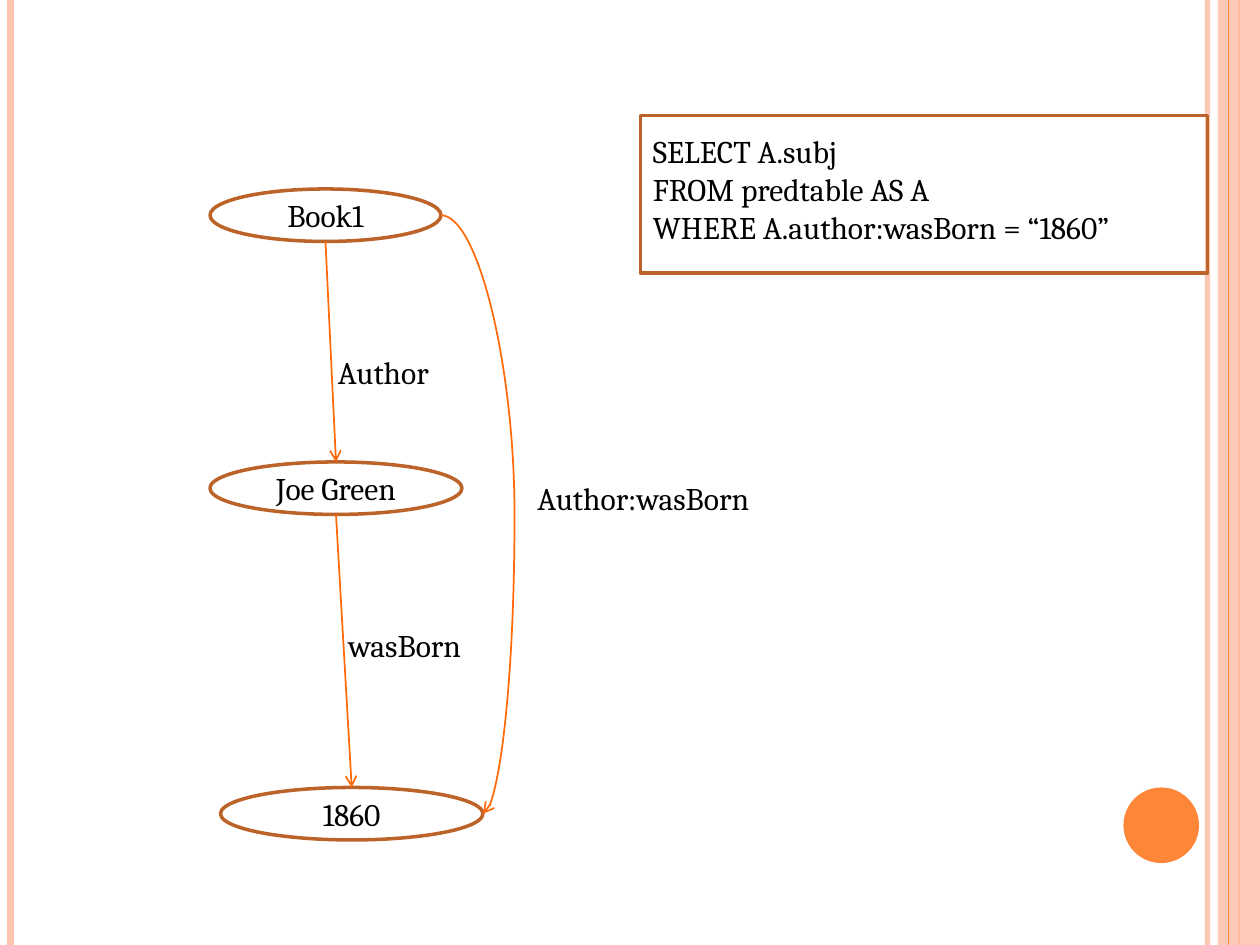
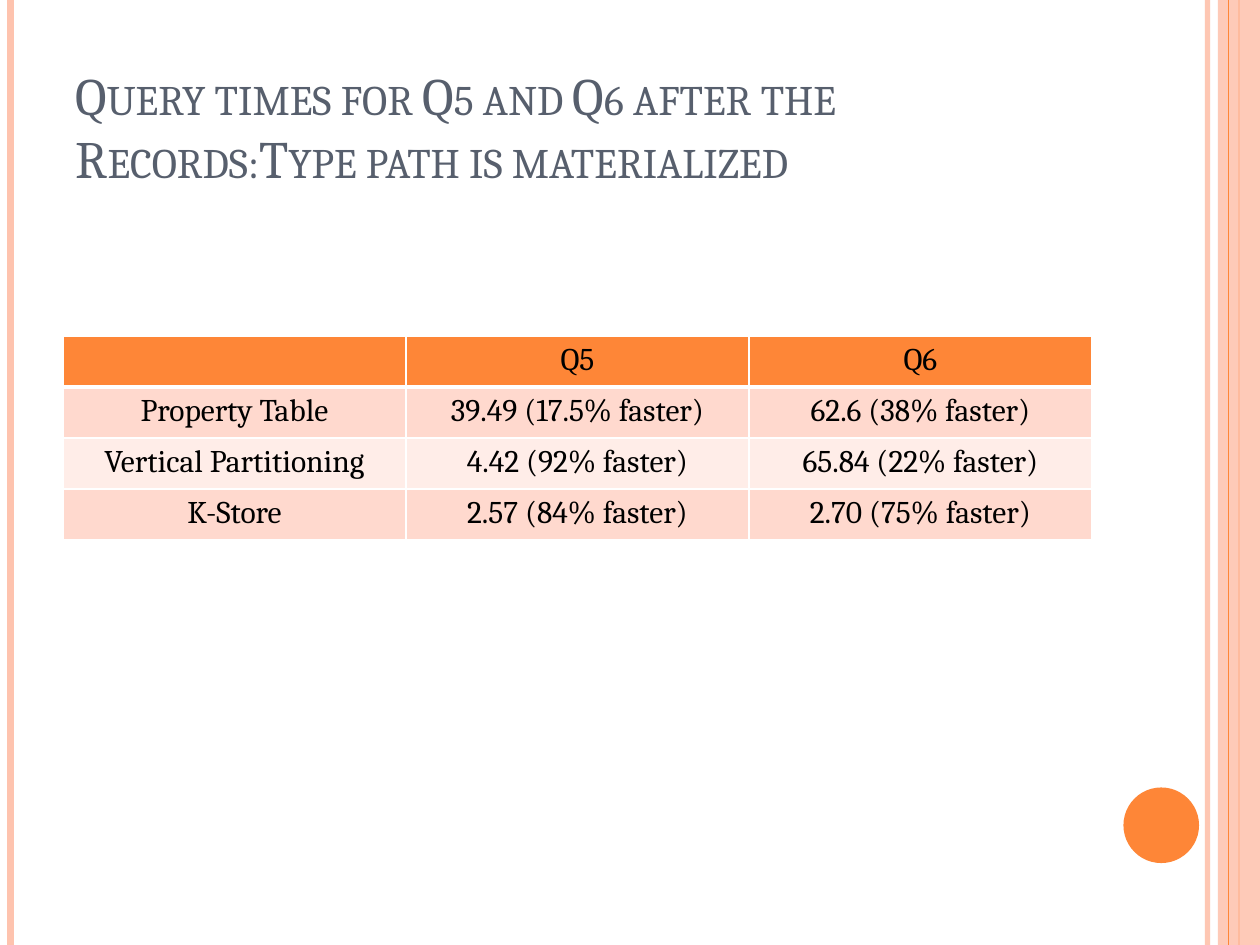
from pptx import Presentation
from pptx.dml.color import RGBColor
from pptx.enum.shapes import MSO_CONNECTOR, MSO_SHAPE
from pptx.enum.text import MSO_ANCHOR, PP_ALIGN
from pptx.oxml.ns import qn
from pptx.util import Inches, Pt
from lxml import etree

RECT, OVAL = MSO_SHAPE.RECTANGLE, MSO_SHAPE.OVAL
STRAIGHT, CURVE = MSO_CONNECTOR.STRAIGHT, MSO_CONNECTOR.CURVE
LEFT, CENTER = PP_ALIGN.LEFT, PP_ALIGN.CENTER
TOP, MIDDLE, BOTTOM = MSO_ANCHOR.TOP, MSO_ANCHOR.MIDDLE, MSO_ANCHOR.BOTTOM

# Grid: 120 columns by 90 rows, twelve to the inch
COLS, ROWS = 120, 90
FONT = "Cambria"
COLORS = {
    "text": "000000", "title": "575F6D", "white": "FFFFFF",
    "accent": "FE8637", "band": "FEC3AE", "outline": "BC6329",
    "arrow": "FF6B0A", "row_dark": "FFD9CE", "row_light": "FFEDE8",
}


def grid(n):
    return Inches(n / 12)


def rgb(name):
    return RGBColor.from_string(COLORS[name])


def add_sub(parent, tag, **attrs):
    return etree.SubElement(parent, qn(tag), attrs)


def set_alpha(parent, percent):
    color = next(parent.iter(qn("a:srgbClr")))
    add_sub(color, "a:alpha", val=str(percent * 1000))


def write(tf, text, size=18, color="text", align=LEFT, anchor=TOP):
    tf.text = text
    tf.vertical_anchor = anchor
    for p in tf.paragraphs:
        p.alignment = align
        for r in p.runs:
            r.font.name, r.font.size = FONT, Pt(size)
            r.font.color.rgb = rgb(color)


def add_shape(slide, kind, box, fill=None, line=None):
    s = slide.shapes.add_shape(kind, *map(grid, box))
    s.shadow.inherit = False
    if fill:
        s.fill.solid()
        s.fill.fore_color.rgb = rgb(fill)
    else:
        s.fill.background()
    if line:
        s.line.color.rgb = rgb(line)
        s.line.width = Pt(2)
    else:
        s.line.fill.background()
    return s


def add_text(slide, box, text, wrap=True, **style):
    tf = slide.shapes.add_textbox(*map(grid, box)).text_frame
    tf.word_wrap = wrap
    write(tf, text, **style)
    return tf


def add_line(slide, start, end, color, width, kind=STRAIGHT, alpha=None, arrow=False):
    c = slide.shapes.add_connector(kind, *map(grid, start + end))
    c.line.color.rgb = rgb(color)
    c.line.width = Pt(width)
    ln = c.line._get_or_add_ln()
    if alpha:
        set_alpha(ln, alpha)
    if arrow:
        add_sub(ln, "a:tailEnd", type="arrow")
    add_sub(c._element.spPr, "a:effectLst")
    return c


def add_frame(slide):
    """Vertical rules, right band and corner disc on every slide."""
    def rule(x, color, width, alpha=None):
        add_line(slide, (x, 0), (x, ROWS), color, width, alpha=alpha)

    rule(115, "band", 3, 93)
    rule(1, "band", 4.5)
    rule(118, "accent", 1.5)
    band = add_shape(slide, RECT, (116, 0, 4, ROWS), fill="band")
    set_alpha(band._element.spPr, 87)
    rule(117, "accent", 0.75)
    add_shape(slide, OVAL, (107, 75, 7.2, 7.2), fill="accent")


def add_query(slide, box):
    """Outlined panel holding the SQL query."""
    x, y, w, h = box
    add_shape(slide, RECT, box, line="outline")
    add_text(slide, (x, y + 1, w, h - 3),
             "SELECT A.subj\nFROM predtable AS A\nWHERE A.author:wasBorn = “1860”")


def add_path_graph(slide, box):
    """Three nodes linked in a chain, with a curved shortcut past the middle."""
    x, y, w, h = box
    node_h = 5
    nodes = []
    for text, dx, dy, node_w in (("Book1", 0, 0, 22),
                                 ("Joe Green", 0, 26, 24),
                                 ("1860", 1, h - node_h, 25)):
        node = (x + dx, y + dy, node_w, node_h)
        s = add_shape(slide, OVAL, node, line="outline")
        write(s.text_frame, text, align=CENTER, anchor=MIDDLE)
        nodes.append((s, node))

    # Chain arrows, bottom of one node to top of the next
    for (_, (ax, ay, aw, ah)), (target, (bx, by, bw, _)) in zip(nodes, nodes[1:]):
        c = add_line(slide, (ax + aw / 2, ay + ah), (bx + bw / 2, by),
                     "arrow", 1, arrow=True)
        c.end_connect(target, 0)

    # Shortcut arrow, right side of first node to right side of last
    start, end = [(nx + nw, ny + nh / 2)
                  for _, (nx, ny, nw, nh) in (nodes[0], nodes[-1])]
    c = add_line(slide, start, end, "arrow", 1, kind=CURVE, arrow=True)
    guides = c._element.spPr.find(qn("a:prstGeom")).get_or_add_avLst()
    add_sub(guides, "a:gd", name="adj1", fmla="val 175000")

    # Edge labels
    for text, dx, dy, label_w in (("Author", 11, 15, 12.4),
                                  ("wasBorn", 12, 41, 14.8),
                                  ("Author:wasBorn", w, 27, 25.6)):
        add_text(slide, (x + dx, y + dy, label_w, 4.8), text, wrap=False)


def add_title(slide, box, text):
    tf = add_text(slide, box, text, size=30, color="title", anchor=BOTTOM)
    for r in tf.paragraphs[0].runs:
        r.font._element.set("cap", "small")


def set_borders(cell, **widths):
    tcPr = cell._tc.get_or_add_tcPr()
    for i, (side, width) in enumerate(widths.items()):
        ln = etree.Element(qn("a:ln" + side), w=str(Pt(width)))
        fill = add_sub(ln, "a:solidFill")
        add_sub(fill, "a:srgbClr", val=COLORS["white"])
        tcPr.insert(i, ln)


def add_times_table(slide, box, rows):
    table = slide.shapes.add_table(len(rows), len(rows[0]), *map(grid, box)).table
    for i, row in enumerate(rows):
        fill = "accent" if i == 0 else "row_dark" if i % 2 else "row_light"
        for j, text in enumerate(row):
            cell = table.cell(i, j)
            cell.fill.solid()
            cell.fill.fore_color.rgb = rgb(fill)
            write(cell.text_frame, text, align=CENTER)
            set_borders(cell, L=1, R=1, T=3 if i == 1 else 1, B=3 if i == 0 else 1)


def build_query_slide(slide):
    add_frame(slide)
    add_query(slide, (61, 11, 54, 15))
    add_path_graph(slide, (20, 18, 30, 62))


def build_times_slide(slide):
    add_frame(slide)
    add_title(slide, (6, 3.6, 98, 15),
              "Query times for Q5 and Q6 after the Records:Type path is materialized")
    add_times_table(slide, (6, 32, 98, 19.46), [
        ("", "Q5", "Q6"),
        ("Property Table", "39.49 (17.5% faster)", "62.6 (38% faster)"),
        ("Vertical Partitioning", "4.42 (92% faster)", "65.84 (22% faster)"),
        ("K-Store", "2.57 (84% faster)", "2.70 (75% faster)"),
    ])


def main():
    prs = Presentation()
    prs.slide_width, prs.slide_height = grid(COLS), grid(ROWS)
    for build in (build_query_slide, build_times_slide):
        build(prs.slides.add_slide(prs.slide_layouts[6]))
    prs.save("out.pptx")


if __name__ == "__main__":
    main()
